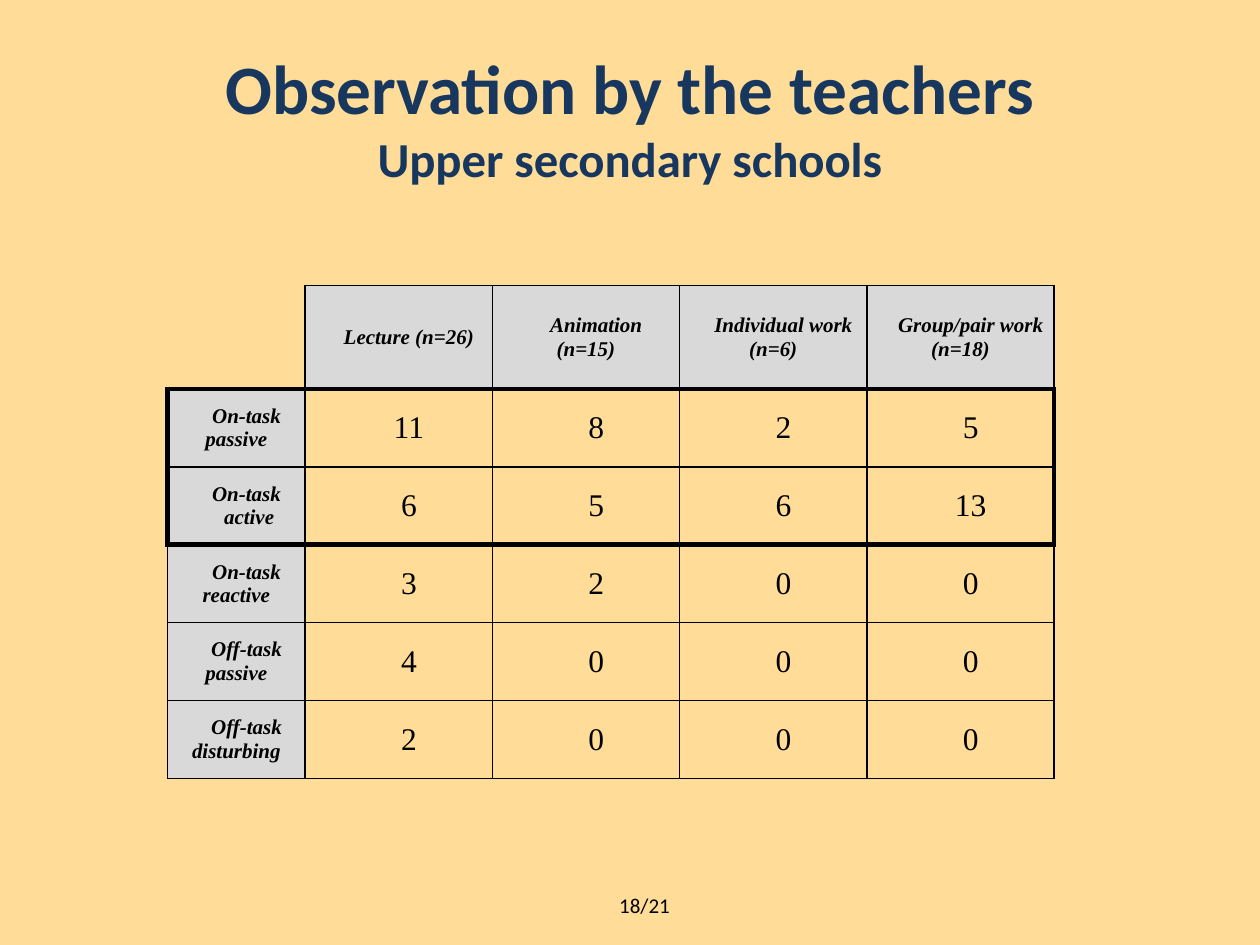
from lxml.etree import SubElement
from pptx import Presentation
from pptx.dml.color import RGBColor
from pptx.enum.text import MSO_ANCHOR as Anchor, PP_ALIGN as Align
from pptx.oxml.ns import qn
from pptx.util import Cm, Pt

SAND, NAVY, GREY, BLACK = "FFDC97", "17375E", "D9D9D9", "000000"
HEADS = ["", "Lecture (n=26)", "Animation (n=15)", "Individual work (n=6)",
         "Group/pair work (n=18)"]
ROWS = [
    ["On-task passive", 11, 8, 2, 5],
    ["On-task\n active", 6, 5, 6, 13],
    ["On-task reactive", 3, 2, 0, 0],
    ["Off-task passive", 4, 0, 0, 0],
    ["Off-task disturbing", 2, 0, 0, 0],
]
BOXED = (1, 2)  # rows inside the thick frame


def color(code):
    return RGBColor.from_string(code)


def style(font, name, size, code, bold=False, italic=False):
    font.name, font.size = name, Pt(size)
    font.bold, font.italic = bold, italic
    font.color.rgb = color(code)


def add_title(slide, left, top, width, height):
    title = slide.shapes.title
    title.left, title.top = Cm(left), Cm(top)
    title.width, title.height = Cm(width), Cm(height)
    frame = title.text_frame
    frame.text = "Observation by the teachers\vUpper secondary schools"
    frame.vertical_anchor = Anchor.MIDDLE
    par = frame.paragraphs[0]
    par.alignment = Align.CENTER
    for run, size in zip(par.runs, (39.6, 27.9)):
        style(run.font, "Calibri", size, NAVY, bold=True)
    SubElement(par._p.find(qn("a:br")), qn("a:rPr"), sz="3960")


def add_edge(cell, side, width):
    """Draw one cell border; a width of 0 hides it."""
    line = SubElement(cell._tc.get_or_add_tcPr(), qn(f"a:ln{side}"),
                      w=str(Pt(width)))
    if width:
        fill = SubElement(line, qn("a:solidFill"))
        SubElement(fill, qn("a:srgbClr"), val=BLACK)
    else:
        SubElement(line, qn("a:noFill"))


def add_edges(cell, row, col):
    def upright(edge):
        return 3 if row in BOXED and edge in (0, len(HEADS)) else 1

    def level(edge):
        return 3 if edge in (BOXED[0], BOXED[-1] + 1) else 1

    corner = row == col == 0
    add_edge(cell, "L", 0 if corner else upright(col))
    add_edge(cell, "R", upright(col + 1))
    add_edge(cell, "T", 0 if corner else level(row))
    add_edge(cell, "B", level(row + 1))


def fill_cell(cell, text, label):
    cell.margin_left = cell.margin_right = Cm(0.18)
    cell.margin_top = cell.margin_bottom = 0
    cell.vertical_anchor = Anchor.MIDDLE
    cell.text_frame.text = text
    for par in cell.text_frame.paragraphs:
        par.alignment = Align.CENTER
        props = par._p.get_or_add_pPr()
        props.set("marL", "0")
        props.set("indent", str(Cm(0.41)))
        for run in par.runs:
            style(run.font, "Times New Roman", 12 if label else 18, BLACK,
                  bold=label, italic=label)


def add_grid(slide, left, top, width, height):
    data = [HEADS] + ROWS
    table = slide.shapes.add_table(len(data), len(HEADS), Cm(left), Cm(top),
                                   Cm(width), Cm(height)).table
    table.first_row = table.horz_banding = False
    first, head = 2.77, 2.08
    for col, item in enumerate(table.columns):
        item.width = Cm((width - first) / (len(HEADS) - 1) if col else first)
    for row, item in enumerate(table.rows):
        item.height = Cm((height - head) / len(ROWS) if row else head)
    for row, values in enumerate(data):
        for col, value in enumerate(values):
            cell = table.cell(row, col)
            label = row == 0 or col == 0
            fill_cell(cell, str(value), label)
            add_edges(cell, row, col)
            if label:
                cell.fill.solid()
                cell.fill.fore_color.rgb = color(GREY if row or col else SAND)
            else:
                cell.fill.background()


def add_page(slide, left, top, width, height):
    box = slide.shapes.add_textbox(Cm(left), Cm(top), Cm(width), Cm(height))
    frame = box.text_frame
    frame.word_wrap = True
    frame.text = "18/21"
    par = frame.paragraphs[0]
    par.alignment = Align.CENTER
    style(par.runs[0].font, "Calibri", 12, BLACK)


def main():
    deck = Presentation()
    deck.slide_width, deck.slide_height = Cm(25.4), Cm(19.05)
    slide = deck.slides.add_slide(deck.slide_layouts[5])
    slide.background.fill.solid()
    slide.background.fill.fore_color.rgb = color(SAND)
    add_title(slide, 1.27, 0.76, 22.86, 3.18)
    add_grid(slide, 3.38, 5.76, 17.87, 9.93)
    add_page(slide, 10.52, 17.86, 4.95, 0.76)
    deck.save("out.pptx")


if __name__ == "__main__":
    main()
